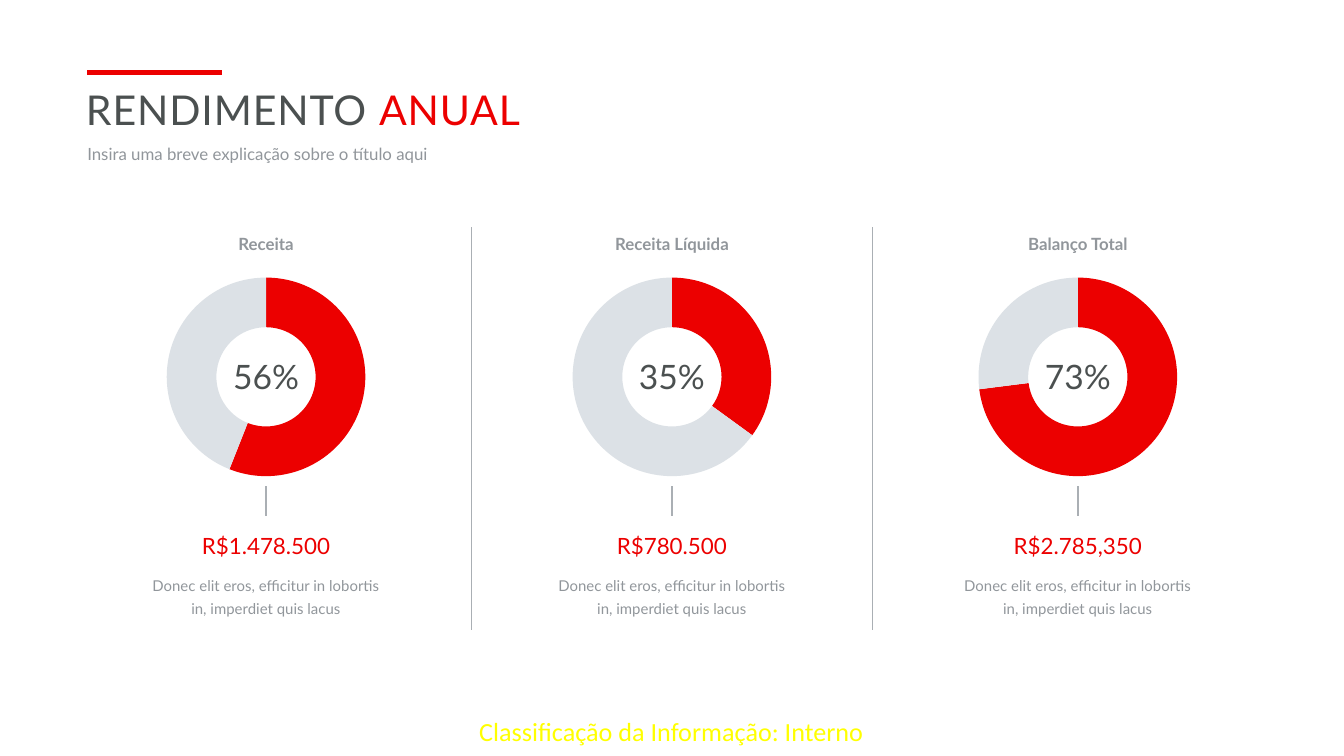
from lxml import etree
from pptx import Presentation
from pptx.chart.data import CategoryChartData
from pptx.dml.color import RGBColor
from pptx.enum.chart import XL_CHART_TYPE
from pptx.enum.shapes import MSO_CONNECTOR
from pptx.enum.text import MSO_ANCHOR, PP_ALIGN
from pptx.oxml import parse_xml
from pptx.oxml.ns import nsdecls, qn
from pptx.util import Inches, Pt

DOUGHNUT = XL_CHART_TYPE.DOUGHNUT
STRAIGHT = MSO_CONNECTOR.STRAIGHT
LEFT, CENTER = PP_ALIGN.LEFT, PP_ALIGN.CENTER
TOP, MIDDLE = MSO_ANCHOR.TOP, MSO_ANCHOR.MIDDLE

RED = RGBColor(0xEC, 0x00, 0x00)
DARK = RGBColor(0x4B, 0x50, 0x50)
GREY = RGBColor(0x91, 0x96, 0x9B)
RULE = RGBColor(0xAA, 0xAF, 0xB4)
PALE = RGBColor(0xDC, 0xE1, 0xE6)
BLACK = RGBColor(0x00, 0x00, 0x00)
YELLOW = RGBColor(0xFF, 0xFF, 0x00)

TITLE = [("RENDIMENTO ", DARK), ("ANUAL", RED)]
SUBTITLE = "Insira uma breve explicação sobre o título aqui"
CLASSIFICATION = "Classificação da Informação: Interno"
DESCRIPTION = "Donec elit eros, efficitur in lobortis in, imperdiet quis lacus"
INDICATORS = [
    ("Receita", 56, "R$1.478.500"),
    ("Receita Líquida", 35, "R$780.500"),
    ("Balanço Total", 73, "R$2.785,350"),
]

SLIDE_WIDTH = 10
SLIDE_HEIGHT = SLIDE_WIDTH * 9 / 16
MIDDLE_X = SLIDE_WIDTH / 2
COLUMN_PITCH = 3.02
COLUMN_WIDTH = 1.73
CHART_WIDTH, CHART_HEIGHT = 1.76, 1.81
RING_BOUNDS = {"x": 0.08, "y": 0.09, "w": 0.84, "h": 0.82}
DIVIDER_OFFSET = 1.49

prs = Presentation()
prs.slide_width, prs.slide_height = Inches(SLIDE_WIDTH), Inches(SLIDE_HEIGHT)
slide = prs.slides.add_slide(prs.slide_layouts[6])


def add_text(text, left, top, width, height, size, color=GREY, font="Lato",
             bold=False, align=CENTER, anchor=TOP, line_spacing=None, tracking=None):
    box = slide.shapes.add_textbox(Inches(left), Inches(top), Inches(width), Inches(height))
    frame = box.text_frame
    frame.word_wrap = True
    frame.vertical_anchor = anchor
    frame.margin_left = frame.margin_right = frame.margin_top = frame.margin_bottom = 0
    paragraph = frame.paragraphs[0]
    paragraph.alignment = align
    if line_spacing:
        paragraph.line_spacing = line_spacing
    pieces = [(text, color)] if isinstance(text, str) else text
    for words, shade in pieces:
        run = paragraph.add_run()
        run.text = words
        run.font.size = Pt(size)
        run.font.name = font
        run.font.bold = bold
        run.font.color.rgb = shade
        if tracking:
            run.font._element.set("spc", str(int(tracking * 100)))


def add_line(x1, y1, x2, y2, color=RULE, weight=0.75):
    line = slide.shapes.add_connector(STRAIGHT, Inches(x1), Inches(y1), Inches(x2), Inches(y2))
    line.line.color.rgb = color
    line.line.width = Pt(weight)
    etree.SubElement(line._element.spPr, qn("a:effectLst"))


def add_ring(percent, center):
    ring_data = CategoryChartData()
    ring_data.categories = ["1", "2"]
    ring_data.add_series("Series 1", (percent, 100 - percent))
    chart = slide.shapes.add_chart(
        DOUGHNUT, Inches(center - CHART_WIDTH / 2), Inches(1.9),
        Inches(CHART_WIDTH), Inches(CHART_HEIGHT), ring_data).chart
    chart.has_legend = False
    chart.has_title = False
    chart.font.size = Pt(10)
    chart.font.name = "Calibri"
    chart.font.color.rgb = BLACK
    plot = chart.plots[0]
    plot.vary_by_categories = False
    for index, color in enumerate((RED, PALE)):
        point = plot.series[0].points[index].format
        point.fill.solid()
        point.fill.fore_color.rgb = color
        point.line.fill.background()
    plot._element.find(qn("c:holeSize")).set("val", "75")

    settings = '<c:layoutTarget val="inner"/><c:xMode val="edge"/><c:yMode val="edge"/>'
    settings += "".join(f'<c:{key} val="{value}"/>' for key, value in RING_BOUNDS.items())
    plot_area = chart._chartSpace.chart.plotArea
    for layout in plot_area.findall(qn("c:layout")):
        plot_area.remove(layout)
    plot_area.insert(0, parse_xml(
        f'<c:layout {nsdecls("c")}><c:manualLayout>{settings}</c:manualLayout></c:layout>'))


add_text(CLASSIFICATION, 3.34, 5.26, 3.31, 0.36, size=14, color=YELLOW,
         font="Calibri", anchor=MIDDLE)
add_line(0.65, 0.54, 1.65, 0.54, color=RED, weight=2.25)
add_text(TITLE, 0.64, 0.63, 8.7, 0.42, size=22, align=LEFT, tracking=0.5)
add_text(SUBTITLE, 0.65, 1.05, 8.7, 0.15, size=9, align=LEFT, line_spacing=Pt(12))

for column, (label, percent, amount) in enumerate(INDICATORS):
    center = MIDDLE_X + (column - 1) * COLUMN_PITCH
    left = center - COLUMN_WIDTH / 2
    add_ring(percent, center)
    add_text(f"{percent}%", center - 0.47, 2.65, 0.94, 0.3, size=18, color=DARK)
    add_text(label, left, 1.74, COLUMN_WIDTH, 0.15, size=9, bold=True)
    add_text(amount, left, 3.96, COLUMN_WIDTH, 0.2, size=12, color=RED)
    add_text(DESCRIPTION, left, 4.25, COLUMN_WIDTH, 0.33, size=8, line_spacing=1.3)
    add_line(center, 3.62, center, 3.84)

for x in (MIDDLE_X - DIVIDER_OFFSET, MIDDLE_X + DIVIDER_OFFSET):
    add_line(x, 1.69, x, 4.69)

prs.save("out.pptx")
